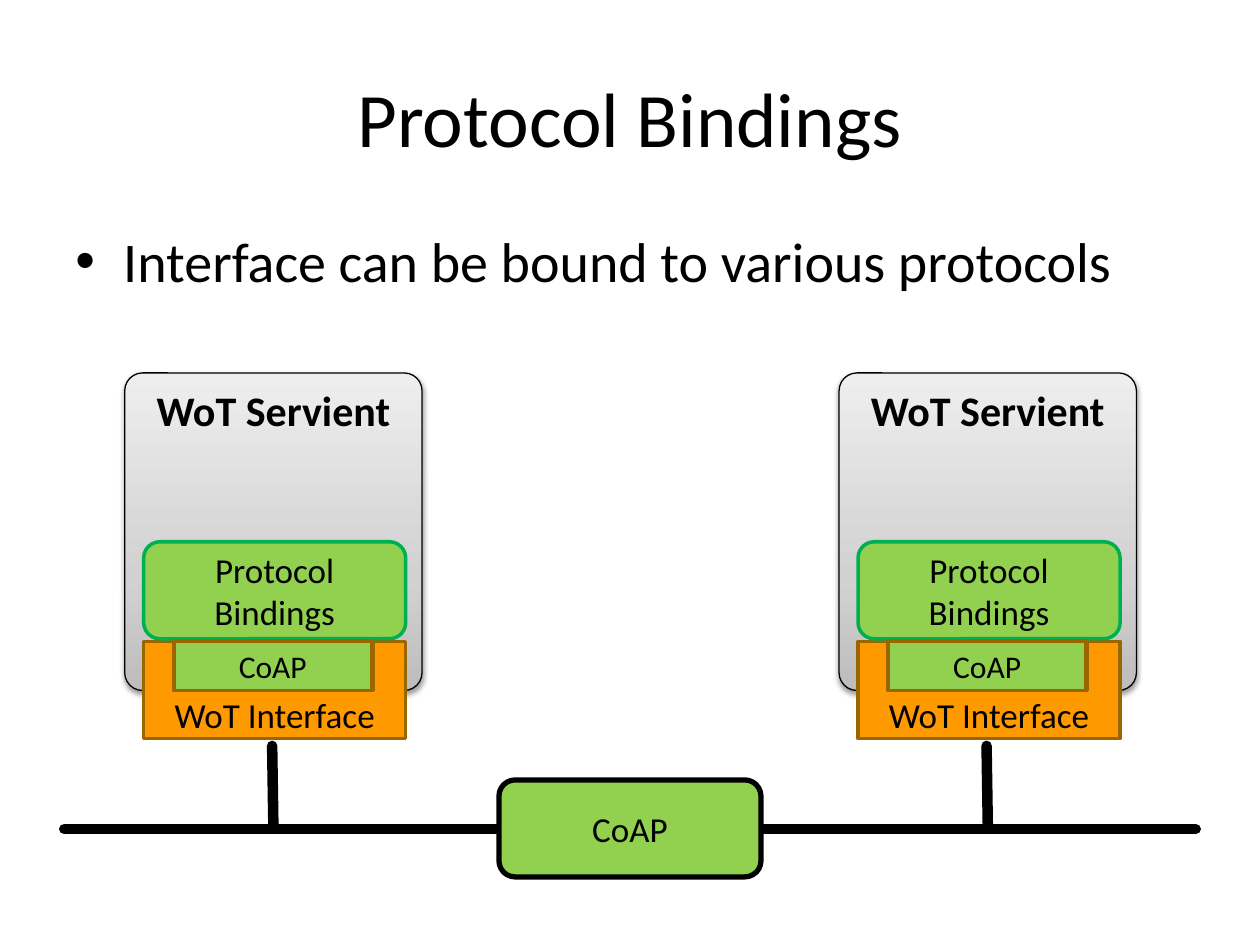
from copy import deepcopy

from pptx import Presentation
from pptx.dml.color import RGBColor
from pptx.enum import shapes, text
from pptx.oxml import parse_xml
from pptx.oxml.ns import nsdecls, qn
from pptx.util import Inches, Pt

BLACK = RGBColor(0x00, 0x00, 0x00)
LIME = RGBColor(0x92, 0xD0, 0x50)
GREEN = RGBColor(0x00, 0xB0, 0x50)
ORANGE = RGBColor(0xFF, 0x99, 0x00)
BROWN = RGBColor(0x99, 0x66, 0x00)
PANEL_STOPS = [
    (0, RGBColor(0xBD, 0xBD, 0xBD)),
    (0.35, RGBColor(0xD1, 0xD1, 0xD1)),
    (1, RGBColor(0xEE, 0xEE, 0xEE)),
]
RECT = shapes.MSO_SHAPE.RECTANGLE
ROUND = shapes.MSO_SHAPE.ROUNDED_RECTANGLE
TOP = text.MSO_ANCHOR.TOP
MIDDLE = text.MSO_ANCHOR.MIDDLE
BOTTOM = text.MSO_ANCHOR.BOTTOM
SERVIENT_LEFT = 0.99
SERVIENT_PITCH = 5.67
BUS_Y = 6.58


def write(sp, content, size=20, bold=False, align=text.PP_ALIGN.CENTER,
          anchor=MIDDLE, wrap=True):
    tf = sp.text_frame
    tf.word_wrap = wrap
    tf.vertical_anchor = anchor
    p = tf.paragraphs[0]
    p.text = content
    p.alignment = align
    for r in p.runs:
        r.font.name = "Calibri"
        r.font.size = Pt(size)
        r.font.bold = bold
        r.font.color.rgb = BLACK
    return p


def add_text(s, box, content, **fmt):
    sp = s.shapes.add_textbox(*map(Inches, box))
    return write(sp, content, **fmt)


def add_bullet(p, indent):
    pPr = p._p.get_or_add_pPr()
    pPr.set("marL", str(Inches(indent)))
    pPr.set("indent", str(-Inches(indent)))
    pPr.append(parse_xml(f'<a:buFont {nsdecls("a")} typeface="Arial"/>'))
    pPr.append(parse_xml(f'<a:buChar {nsdecls("a")} char="•"/>'))


def paint(sp, fill, line, width):
    sp.shadow.inherit = False
    sp.fill.solid()
    sp.fill.fore_color.rgb = fill
    sp.line.color.rgb = line
    sp.line.width = Pt(width)


def add_box(s, kind, box, content, line, width, fill=LIME, **fmt):
    sp = s.shapes.add_shape(kind, *map(Inches, box))
    paint(sp, fill, line, width)
    write(sp, content, **fmt)
    return sp


def add_line(s, start, end):
    ends = map(Inches, (*start, *end))
    cx = s.shapes.add_connector(shapes.MSO_CONNECTOR.STRAIGHT, *ends)
    cx.line.color.rgb = BLACK
    cx.line.width = Pt(6)
    cx.line._get_or_add_ln().set("cap", "rnd")
    cx._element.spPr.append(parse_xml(f'<a:effectLst {nsdecls("a")}/>'))


def add_panel(s, left):
    sp = add_box(s, ROUND, (left, 2.96, 2.36, 2.52), "WoT Servient", BLACK, 0.75,
                 size=24, bold=True, anchor=TOP, wrap=False)
    sp.adjustments[0] = 0.06
    sp.fill.gradient()
    sp.fill.gradient_angle = 90
    spPr = sp._element.spPr
    stops = spPr.find(".//" + qn("a:gsLst"))
    stops.append(deepcopy(stops[0]))
    for stop, (position, color) in zip(sp.fill.gradient_stops, PANEL_STOPS):
        stop.position = position
        stop.color.rgb = color
    spPr.find(qn("a:effectLst")).append(parse_xml(
        f'<a:outerShdw {nsdecls("a")} blurRad="{Pt(3.1)}" dist="{Pt(1.6)}" '
        'dir="5400000" rotWithShape="0"><a:srgbClr val="000000">'
        '<a:alpha val="38000"/></a:srgbClr></a:outerShdw>'))


def add_interface(s, left, top):
    outline = [(0.25, 0), (0.25, 0.39), (1.82, 0.39), (1.82, 0),
               (2.08, 0), (2.08, 0.77), (0, 0.77)]
    points = [(Inches(left + x), Inches(top + y)) for x, y in outline]
    fb = s.shapes.build_freeform(Inches(left), Inches(top))
    fb.add_line_segments(points, close=True)
    sp = fb.convert_to_shape()
    paint(sp, ORANGE, BROWN, 2)
    write(sp, "WoT Interface", anchor=BOTTOM)
    sp.text_frame.margin_top = 0
    sp.text_frame.margin_bottom = Inches(0.02)


def add_servient(s, left):
    add_line(s, (left + 1.18, BUS_Y - 0.02), (left + 1.17, 5.92))
    add_panel(s, left)
    add_interface(s, left + 0.15, 5.09)
    add_box(s, ROUND, (left + 0.15, 4.3, 2.08, 0.77), "Protocol\nBindings", GREEN, 2)
    add_box(s, RECT, (left + 0.39, 5.09, 1.57, 0.39), "CoAP", BROWN, 2.25, size=18)


def main():
    prs = Presentation()
    prs.slide_width, prs.slide_height = Inches(10), Inches(7.5)
    s = prs.slides.add_slide(prs.slide_layouts[6])
    add_text(s, (0.5, 0.3, 9, 1.25), "Protocol Bindings", size=44)
    p = add_text(s, (0.5, 1.75, 9, 4.95), "Interface can be bound to various protocols",
                 size=32, align=text.PP_ALIGN.LEFT, anchor=TOP)
    p.space_before = Pt(6.4)
    add_bullet(p, 0.38)
    add_line(s, (0.51, BUS_Y), (9.49, BUS_Y))
    for i in range(2):
        add_servient(s, SERVIENT_LEFT + i * SERVIENT_PITCH)
    add_box(s, ROUND, (3.96, 6.19, 2.08, 0.77), "CoAP", BLACK, 3)
    prs.save("out.pptx")


if __name__ == "__main__":
    main()
